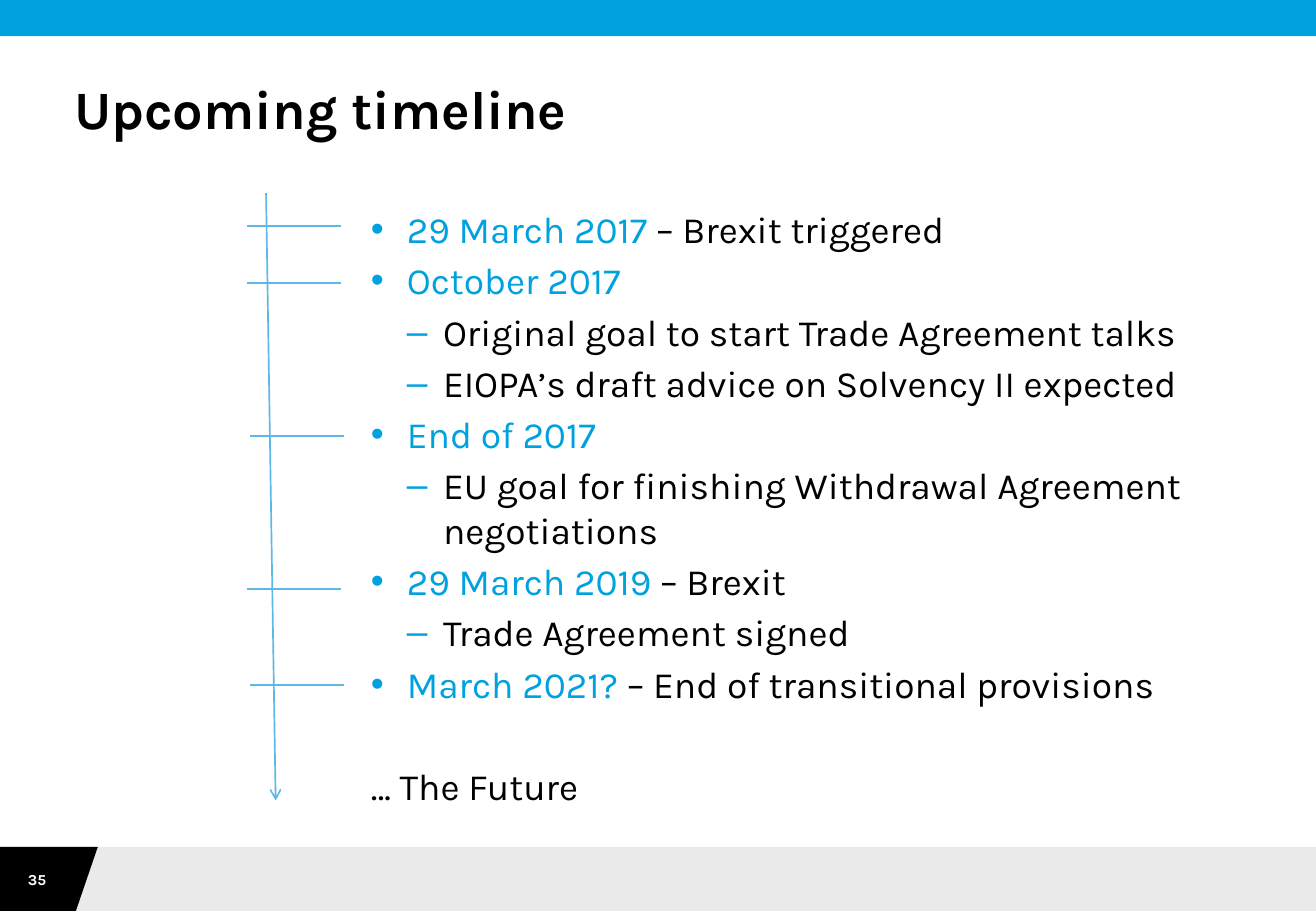
import pptx
import pptx.util
import pptx.dml.color
import pptx.enum.shapes
import pptx.enum.text
import pptx.oxml
import pptx.oxml.ns
from dataclasses import dataclass
from pptx.util import Pt


def rgb(value):
    return pptx.dml.color.RGBColor.from_string(value)


@dataclass(frozen=True)
class Theme:
    font: str = "Karla"
    accent: str = "00A1DF"
    line: str = "5DB8E7"
    black: str = "000000"
    white: str = "FFFFFF"
    footer: str = "EAEAEA"
    title_size: int = 32
    body_size: int = 22
    number_size: int = 9


THEME = Theme()
WIDTH, HEIGHT = 780, 540
FOOTER_TOP = 502
INDENT = 21.4
FUTURE_GAP = 34.4
TICK_LENGTH = 56
TICKS = [(146.4, 134), (146.4, 167.8), (148.2, 258.5), (146.4, 349.2), (148.2, 406)]
MILESTONES = [
    (0, "29 March 2017 ", "– Brexit triggered"),
    (0, "October 2017", ""),
    (1, "", "Original goal to start Trade Agreement talks"),
    (1, "", "EIOPA’s draft advice on Solvency II expected"),
    (0, "End of 2017", ""),
    (1, "", "EU goal for finishing Withdrawal Agreement negotiations"),
    (0, "29 March 2019 ", "– Brexit"),
    (1, "", "Trade Agreement signed"),
    (0, "March 2021? ", "– End of transitional provisions"),
]


def paint(shape, color):
    shape.shadow.inherit = False
    shape.fill.solid()
    shape.fill.fore_color.rgb = rgb(color)
    shape.line.fill.background()


def add_bar(slide, top, height, color):
    bar = slide.shapes.add_shape(
        pptx.enum.shapes.MSO_SHAPE.RECTANGLE, 0, Pt(top), Pt(WIDTH), Pt(height))
    paint(bar, color)


def add_number_tab(slide):
    builder = slide.shapes.build_freeform(0, FOOTER_TOP, scale=Pt(1))
    builder.add_line_segments([(58.3, FOOTER_TOP), (45.4, HEIGHT), (0, HEIGHT)], close=True)
    paint(builder.convert_to_shape(), THEME.black)


def add_run(paragraph, text, size, color, bold=False):
    run = paragraph.add_run()
    run.text = text
    run.font.name = THEME.font
    run.font.size = Pt(size)
    run.font.bold = bold
    run.font.color.rgb = rgb(color)


def prepare_frame(shape, anchor):
    frame = shape.text_frame
    frame.margin_left = frame.margin_right = frame.margin_top = frame.margin_bottom = 0
    frame.word_wrap = True
    frame.auto_size = pptx.enum.text.MSO_AUTO_SIZE.NONE
    frame.vertical_anchor = anchor
    return frame


def place(shape, left, top, width, height):
    shape.left, shape.top, shape.width, shape.height = map(Pt, (left, top, width, height))


def add_slide_number(slide, number):
    box = slide.shapes.add_textbox(0, Pt(512.6), Pt(44), Pt(17.3))
    paragraph = prepare_frame(box, pptx.enum.text.MSO_ANCHOR.MIDDLE).paragraphs[0]
    paragraph.alignment = pptx.enum.text.PP_ALIGN.CENTER
    add_run(paragraph, number, THEME.number_size, THEME.white, bold=True)


def fill_title(slide, text):
    title = slide.shapes.title
    place(title, 44, 49, 692, 34)
    paragraph = prepare_frame(title, pptx.enum.text.MSO_ANCHOR.TOP).paragraphs[0]
    paragraph.alignment = pptx.enum.text.PP_ALIGN.LEFT
    paragraph.line_spacing = 0.9
    add_run(paragraph, text, THEME.title_size, THEME.black, bold=True)


def set_bullet(paragraph, level, character):
    paragraph.level = level
    properties = paragraph._p.get_or_add_pPr()
    properties.set("marL", str(Pt(INDENT * (level + 1))))
    properties.set("indent", str(Pt(-INDENT)))
    namespace = pptx.oxml.ns.nsdecls("a")
    for xml in (
        f'<a:buClr {namespace}><a:srgbClr val="{THEME.accent}"/></a:buClr>',
        f'<a:buChar {namespace} char="{character}"/>',
    ):
        properties.append(pptx.oxml.parse_xml(xml))


def clear_bullet(paragraph):
    properties = paragraph._p.get_or_add_pPr()
    properties.set("marL", "0")
    properties.set("indent", "0")
    namespace = pptx.oxml.ns.nsdecls("a")
    properties.append(pptx.oxml.parse_xml(f"<a:buNone {namespace}/>"))


def fill_milestones(slide):
    body = slide.placeholders[1]
    place(body, 219.8, 122.4, 516, 351)
    frame = prepare_frame(body, pptx.enum.text.MSO_ANCHOR.TOP)
    for index, (level, date, event) in enumerate(MILESTONES):
        paragraph = frame.add_paragraph() if index else frame.paragraphs[0]
        set_bullet(paragraph, level, "•–"[level])
        paragraph.space_before = Pt(4 if index else 0)
        for text, color in ((date, THEME.accent), (event, THEME.black)):
            if text:
                add_run(paragraph, text, THEME.body_size, color)
    future = frame.add_paragraph()
    clear_bullet(future)
    future.space_before = Pt(FUTURE_GAP)
    add_run(future, "… The Future", THEME.body_size, THEME.black)


def add_line(slide, start, end, arrow=False):
    connector = slide.shapes.add_connector(
        pptx.enum.shapes.MSO_CONNECTOR.STRAIGHT, *map(Pt, start + end))
    connector.line.color.rgb = rgb(THEME.line)
    connector.line.width = Pt(1)
    namespace = pptx.oxml.ns.nsdecls("a")
    if arrow:
        connector.line._get_or_add_ln().append(
            pptx.oxml.parse_xml(f'<a:tailEnd {namespace} type="arrow"/>'))
    connector._element.spPr.append(pptx.oxml.parse_xml(f"<a:effectLst {namespace}/>"))


def main():
    presentation = pptx.Presentation()
    presentation.slide_width, presentation.slide_height = Pt(WIDTH), Pt(HEIGHT)
    slide = presentation.slides.add_slide(presentation.slide_layouts[1])
    add_bar(slide, FOOTER_TOP, HEIGHT - FOOTER_TOP, THEME.footer)
    add_number_tab(slide)
    add_bar(slide, 0, 21.4, THEME.accent)
    add_slide_number(slide, "35")
    fill_title(slide, "Upcoming timeline")
    fill_milestones(slide)
    add_line(slide, (157.7, 114.5), (163.4, 474.5), arrow=True)
    for left, top in TICKS:
        add_line(slide, (left, top), (left + TICK_LENGTH, top))
    presentation.save("out.pptx")


if __name__ == "__main__":
    main()
